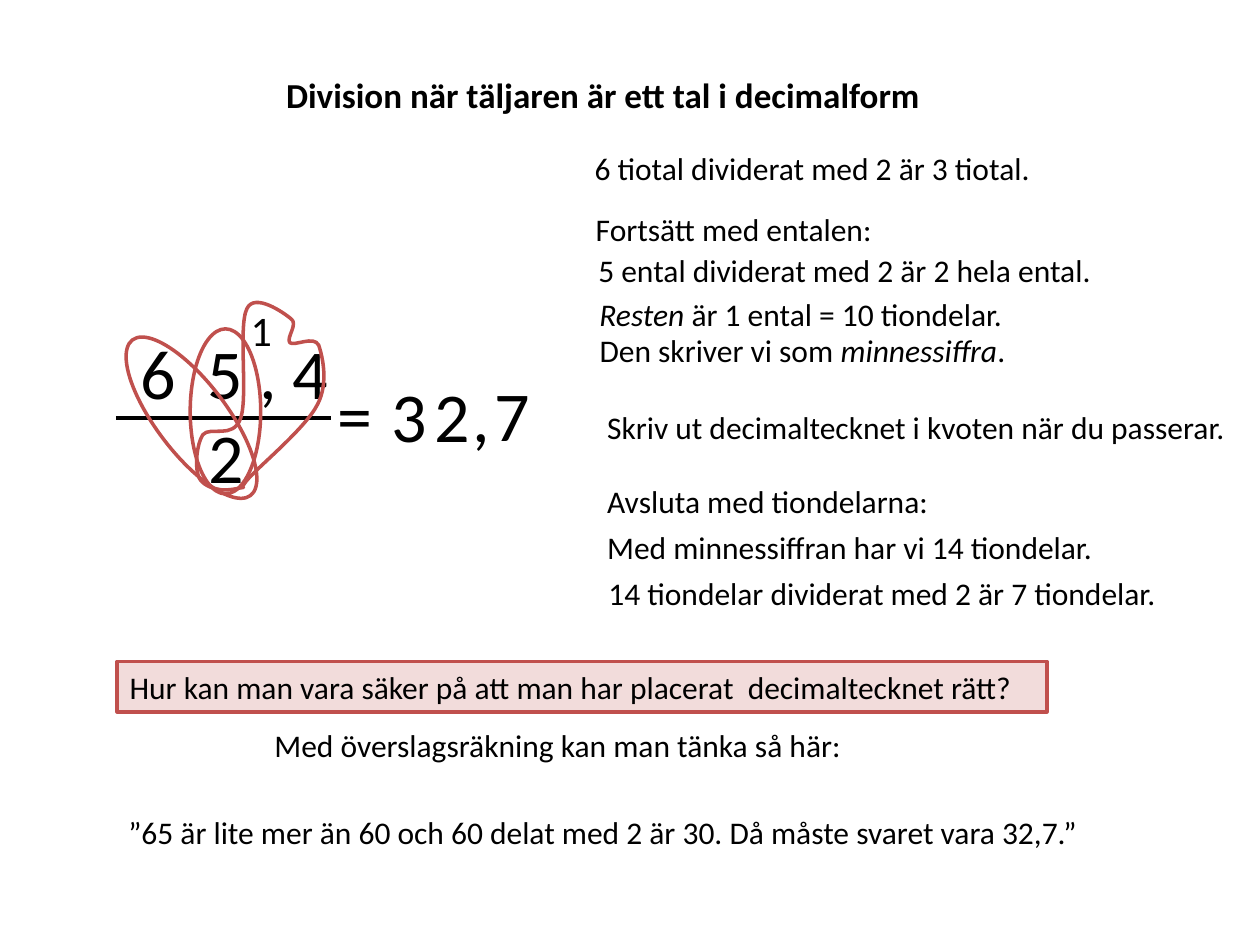
import lxml.etree
import pptx
import pptx.dml.color
import pptx.enum.shapes
import pptx.enum.text
import pptx.oxml.ns
import pptx.util
from dataclasses import dataclass
from typing import Any

Inches = pptx.util.Inches
Pt = pptx.util.Pt
KIND = pptx.enum.shapes.MSO_SHAPE
FONT = "Calibri"
COLORS = {"ink": "000000", "red": "C0504D", "pink": "F2DCDB"}


@dataclass
class Label:
    """Text at a place in inches; parts between asterisks are italic."""
    text: str
    left: float
    top: float
    width: float
    height: float = 0.4
    size: int = 18


@dataclass
class Ring:
    left: float
    top: float
    width: float
    height: float
    turn: float = 0


STEPS = [
    Label("6 tiotal dividerat med 2 är 3 tiotal.", 4.62, 1.13, 5.31),
    Label("Fortsätt med entalen:", 4.63, 1.62, 3.66),
    Label("5 ental dividerat med 2 är 2 hela ental.", 4.65, 1.94, 5.67),
    Label("*Resten* är 1 ental = 10 tiondelar.", 4.66, 2.29, 3.66),
    Label("Den skriver vi som *minnessiffra*.", 4.66, 2.58, 4.31),
    Label("Skriv ut decimaltecknet i kvoten när du passerar.", 4.72, 3.19, 5.32),
    Label("Avsluta med tiondelarna:", 4.72, 3.78, 4.41),
    Label("Med minnessiffran har vi 14 tiondelar.", 4.72, 4.14, 4.65),
    Label("14 tiondelar dividerat med 2 är 7 tiondelar.", 4.73, 4.51, 5.09),
]
FRACTION = [
    Label("6  5 , 4", 1.02, 2.57, 2.24, 0.77, 40),
    Label("2", 1.56, 3.23, 0.63, 0.77, 40),
    Label("1", 1.89, 2.37, 0.55, 0.5, 24),
]
ANSWER = [("3", 3.01, 2.91), ("=", 2.58, 2.9), ("2", 3.35, 2.91),
          (",", 3.65, 2.91), ("7", 3.83, 2.9)]
CHECK = Label("Hur kan man vara säker på att man har placerat  decimaltecknet rätt?",
              0.93, 5.25, 7.38)
REASONS = [
    Label("Med överslagsräkning kan man tänka så här:", 2.08, 5.71, 4.84),
    Label("”65 är lite mer än 60 och 60 delat med 2 är 30. "
          "Då måste svaret vara 32,7.”", 0.92, 6.4, 8.62),
]
RINGS = [Ring(1.24, 2.54, 0.56, 1.55, 322.8), Ring(1.51, 2.61, 0.56, 1.31)]

# Loop round the tenths: a frame, a start, then two handles and an end per curve
FRAME = Ring(1.56, 2.4, 1.01, 1.49)
START = (1.72, 3.88)
CURVES = [
    ((1.66, 3.87), (1.58, 3.83), (1.57, 3.76)),
    ((1.55, 3.69), (1.56, 3.53), (1.61, 3.45)),
    ((1.67, 3.38), (1.85, 3.49), (1.91, 3.32)),
    ((1.97, 3.15), (1.89, 2.59), (1.96, 2.45)),
    ((2.02, 2.32), (2.25, 2.48), (2.31, 2.53)),
    ((2.37, 2.57), (2.27, 2.68), (2.3, 2.72)),
    ((2.34, 2.75), (2.49, 2.66), (2.53, 2.74)),
    ((2.56, 2.83), (2.61, 3.04), (2.52, 3.21)),
    ((2.43, 3.39), (2.08, 3.68), (1.98, 3.79)),
    ((1.88, 3.9), (1.96, 3.86), (1.92, 3.87)),
    ((1.87, 3.88), (1.78, 3.9), START),
]


def color(name: str) -> Any:
    return pptx.dml.color.RGBColor.from_string(COLORS[name])


def place(item: Any) -> list[int]:
    return [Inches(n) for n in (item.left, item.top, item.width, item.height)]


def style(run: Any, size: int, bold: bool = False, slant: bool = False) -> None:
    font = run.font
    font.name, font.size = FONT, Pt(size)
    font.bold, font.italic = bold, slant
    font.color.rgb = color("ink")


def write(shape: Any, label: Label) -> None:
    frame = shape.text_frame
    frame.word_wrap = True
    line = frame.paragraphs[0]
    line.alignment = pptx.enum.text.PP_ALIGN.LEFT
    for index, part in enumerate(label.text.split("*")):
        if part:
            run = line.add_run()
            run.text = part
            style(run, label.size, slant=index % 2 == 1)


def add_label(slide: Any, label: Label) -> None:
    write(slide.shapes.add_textbox(*place(label)), label)


def outline(shape: Any) -> None:
    """Give a shape the red line, no shadow and no fill."""
    shape.shadow.inherit = False
    shape.fill.background()
    shape.line.color.rgb = color("red")
    shape.line.width = Pt(2)


def add_ring(slide: Any, ring: Ring) -> None:
    shape = slide.shapes.add_shape(KIND.OVAL, *place(ring))
    shape.rotation = ring.turn
    outline(shape)


def add_node(parent: Any, tag: str, **values: str) -> Any:
    return lxml.etree.SubElement(parent, pptx.oxml.ns.qn(tag), **values)


def add_loop(slide: Any) -> None:
    """Build a freeform on the frame, then give it the Bezier curves."""
    left, top, width, height = place(FRAME)
    right, base = left + width, top + height
    draft = slide.shapes.build_freeform(left, top)
    draft.add_line_segments([(right, top), (right, base), (left, base)])
    shape = draft.convert_to_shape()
    outline(shape)
    route = shape._element.spPr.find(".//" + pptx.oxml.ns.qn("a:path"))
    for node in list(route):
        route.remove(node)
    moves = [("a:moveTo", (START,))] + [("a:cubicBezTo", c) for c in CURVES]
    for tag, points in moves:
        move = add_node(route, tag)
        for x, y in points:
            add_node(move, "a:pt", x=str(Inches(x) - left), y=str(Inches(y) - top))
    add_node(route, "a:close")


def add_bar(slide: Any) -> None:
    ends = [Inches(n) for n in (0.92, 3.32, 2.63, 3.32)]
    bar = slide.shapes.add_connector(pptx.enum.shapes.MSO_CONNECTOR.STRAIGHT, *ends)
    bar.line.color.rgb = color("ink")
    bar.line.width = Pt(2.25)
    add_node(bar._element.spPr, "a:effectLst")


def add_title(slide: Any) -> None:
    title = slide.shapes.title
    title.left, title.top, title.width, title.height = [
        Inches(n) for n in (2.17, 0.53, 7.14, 0.44)]
    frame = title.text_frame
    frame.text = "Division när täljaren är ett tal i decimalform"
    frame.vertical_anchor = pptx.enum.text.MSO_ANCHOR.TOP
    frame.auto_size = pptx.enum.text.MSO_AUTO_SIZE.NONE
    line = frame.paragraphs[0]
    line.alignment = pptx.enum.text.PP_ALIGN.LEFT
    style(line.runs[0], 20, bold=True)


def add_check(slide: Any) -> None:
    box = slide.shapes.add_shape(KIND.RECTANGLE, *place(CHECK))
    outline(box)
    box.fill.solid()
    box.fill.fore_color.rgb = color("pink")
    write(box, CHECK)


def main() -> None:
    deck = pptx.Presentation()
    deck.slide_width, deck.slide_height = Inches(10), Inches(7.5)
    slide = deck.slides.add_slide(deck.slide_layouts[5])
    add_title(slide)
    digits = [Label(text, left, top, 0.46, 0.77, 40) for text, left, top in ANSWER]
    for label in FRACTION + digits + STEPS:
        add_label(slide, label)
    add_bar(slide)
    for ring in RINGS:
        add_ring(slide, ring)
    add_loop(slide)
    add_check(slide)
    for label in REASONS:
        add_label(slide, label)
    deck.save("out.pptx")


if __name__ == "__main__":
    main()
